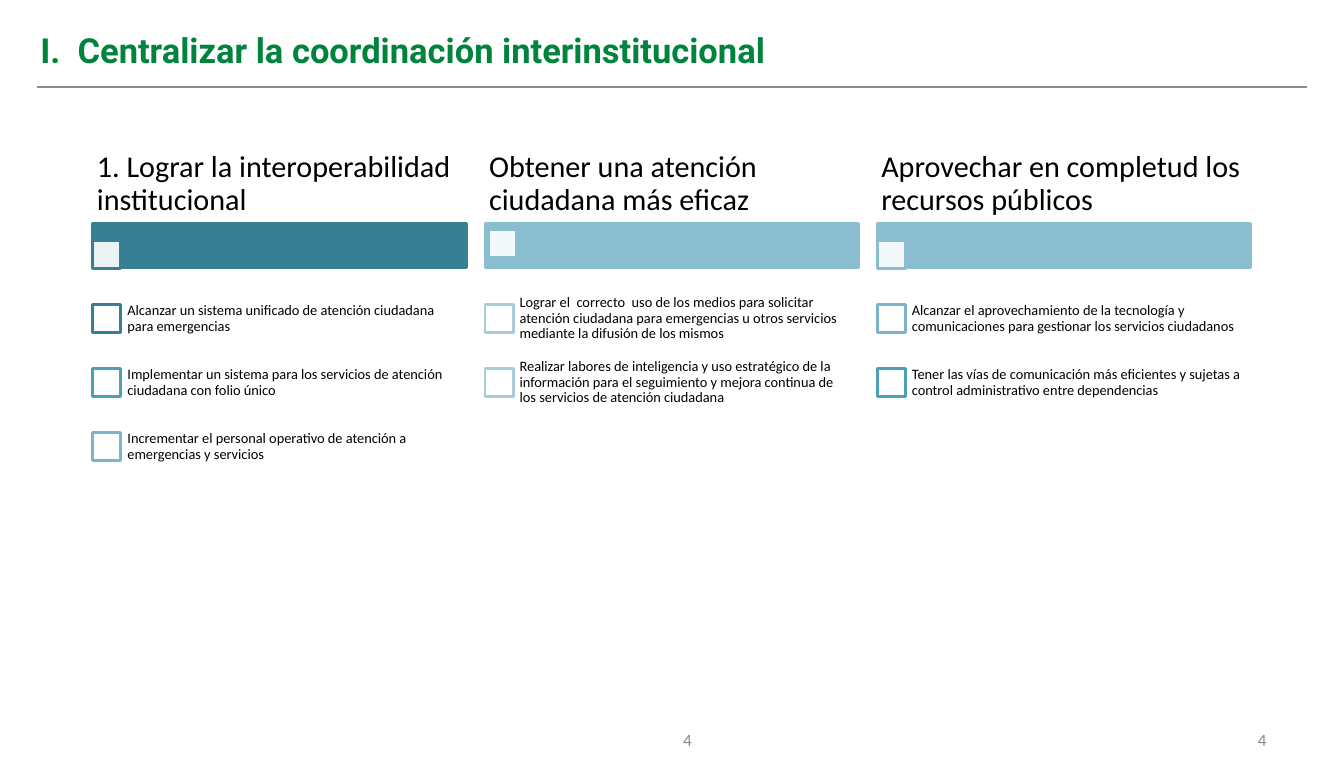
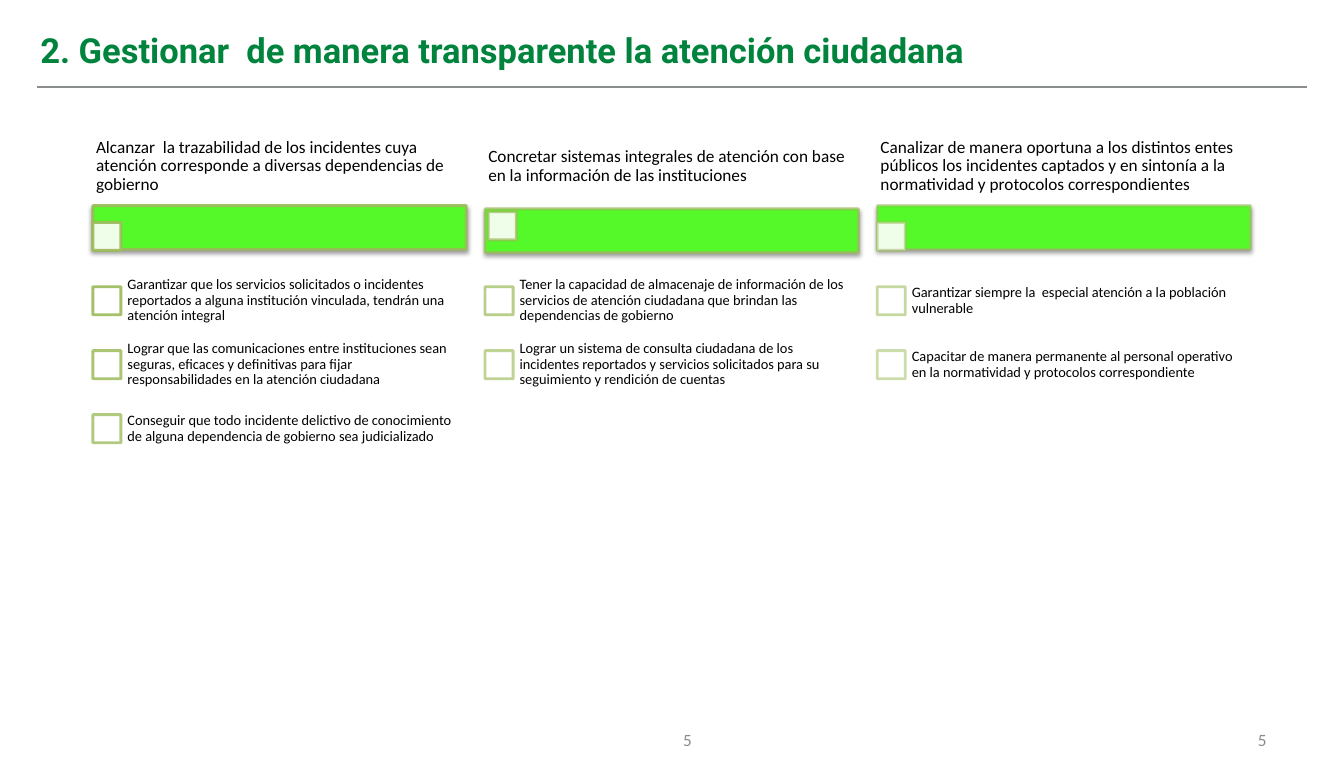
"""Builds two slides of objectives, each with three columns of checklist items."""
import dataclasses

import lxml.etree
import pptx
import pptx.dml.color
import pptx.enum.shapes
import pptx.enum.text
import pptx.oxml.ns
import pptx.util

Cm = pptx.util.Cm
Pt = pptx.util.Pt
qn = pptx.oxml.ns.qn
Align = pptx.enum.text.PP_ALIGN
Anchor = pptx.enum.text.MSO_ANCHOR


@dataclasses.dataclass(frozen=True)
class Theme:
    heading_font: str = "Roboto"
    body_font: str = "Calibri"
    heading: str = "00843D"
    gray: str = "898D8D"
    ink: str = "000000"
    paper: str = "FFFFFF"
    teal: str = "377F92"
    lagoon: str = "4EA0B9"
    mist: str = "7BB5C9"
    sky: str = "8ABDCF"
    ice: str = "A8CCDA"
    lime: str = "55F828"
    olive: str = "9BBB59"
    heading_size: float = 24
    objective_size: float = 21
    long_objective_size: float = 12
    number_size: float = 12
    item_size: float = 10
    outline: float = 2
    rule: float = 1.5


@dataclasses.dataclass(frozen=True)
class Column:
    objective: str
    fill: str
    edge: tuple
    items: tuple


@dataclasses.dataclass(frozen=True)
class Look:
    top: float
    size: float
    inset: tuple
    shadow: bool = False
    middle_drop: float = 0


THEME = Theme()
WIDE, HIGH = 33, 19.05
LEFT, STEP, COLUMN_WIDTH = 2.28, 9.63, 9.17
OBJECTIVE_HEIGHT, BAND_HEIGHT = 1.93, 1.07
ITEMS_OFFSET, ITEM_HEIGHT, ITEM_INDENT = 3.48, 1.57, 0.65
BOX = 0.69
SIDE_MARKER, MIDDLE_MARKER = (0, 2.34), (0.08, 2.08)


class Deck:
    def __init__(self, theme):
        self.theme = theme
        self.show = pptx.Presentation()
        self.show.slide_width, self.show.slide_height = Cm(WIDE), Cm(HIGH)
        self.slide = None

    def start(self, title, number):
        self.slide = self.show.slides.add_slide(self.show.slide_layouts[5])
        self.rule()
        self.title(title)
        for left, width, align in ((12.93, 7.9, Align.CENTER),
                                   (23.65, 7.7, Align.RIGHT)):
            self.text(number, (left, 17.65, width, 1.02),
                      self.theme.number_size, (0.25, 0.13), self.theme.gray,
                      align, 1)

    def rgb(self, color):
        return pptx.dml.color.RGBColor.from_string(color)

    def rule(self):
        rule = self.slide.shapes.add_connector(
            pptx.enum.shapes.MSO_CONNECTOR.STRAIGHT,
            Cm(0.91), Cm(2.13), Cm(32.1), Cm(2.13))
        rule.line.color.rgb = self.rgb(self.theme.gray)
        rule.line.width = Pt(self.theme.rule)
        lxml.etree.SubElement(rule.element.spPr, qn("a:effectLst"))

    def title(self, wording):
        heading = self.slide.shapes.title
        heading.left, heading.top = Cm(0.66), Cm(0.53)
        heading.width, heading.height = Cm(32.2), Cm(1.37)
        self.fill_text(heading.text_frame, wording, self.theme.heading_size,
                       (0.33, 0.18), self.theme.heading, Align.LEFT, 1)
        heading.text_frame.vertical_anchor = Anchor.TOP
        font = heading.text_frame.paragraphs[0].runs[0].font
        font.name, font.bold = self.theme.heading_font, True

    def fill_text(self, frame, wording, size, inset, color, align, spacing):
        frame.text = wording
        frame.word_wrap = True
        frame.auto_size = pptx.enum.text.MSO_AUTO_SIZE.NONE
        frame.vertical_anchor = Anchor.MIDDLE
        frame.margin_left = frame.margin_right = Cm(inset[0])
        frame.margin_top = frame.margin_bottom = Cm(inset[1])
        paragraph = frame.paragraphs[0]
        paragraph.alignment, paragraph.line_spacing = align, spacing
        font = paragraph.runs[0].font
        font.name, font.size = self.theme.body_font, Pt(size)
        font.color.rgb = self.rgb(color)

    def text(self, wording, area, size, inset, color=None, align=Align.LEFT,
             spacing=0.9):
        holder = self.slide.shapes.add_textbox(*map(Cm, area))
        self.fill_text(holder.text_frame, wording, size, inset,
                       color or self.theme.ink, align, spacing)

    def fade(self, parent, percent):
        if percent < 100:
            tint = parent.find(qn("a:solidFill")).find(qn("a:srgbClr"))
            alpha = lxml.etree.SubElement(tint, qn("a:alpha"))
            alpha.set("val", str(percent * 1000))

    def rectangle(self, area, fill, edge, fill_opacity=100, shadow=False):
        edge_color, edge_opacity = edge
        block = self.slide.shapes.add_shape(
            pptx.enum.shapes.MSO_SHAPE.RECTANGLE, *map(Cm, area))
        block.fill.solid()
        block.fill.fore_color.rgb = self.rgb(fill)
        block.line.color.rgb = self.rgb(edge_color)
        block.line.width = Pt(self.theme.outline)
        block.shadow.inherit = False
        properties = block.element.spPr
        self.fade(properties, fill_opacity)
        self.fade(properties.find(qn("a:ln")), edge_opacity)
        if shadow:
            self.drop_shadow(properties.find(qn("a:effectLst")))

    def drop_shadow(self, effects):
        outer = lxml.etree.SubElement(
            effects, qn("a:outerShdw"), blurRad=str(int(Pt(3.1))),
            dist=str(int(Pt(1.6))), dir="5400000", rotWithShape="0")
        tint = lxml.etree.SubElement(outer, qn("a:srgbClr"), val=self.theme.ink)
        lxml.etree.SubElement(tint, qn("a:alpha"), val="38000")

    def item(self, wording, left, top, edge):
        self.rectangle((left, top + (ITEM_HEIGHT - BOX) / 2, BOX, BOX),
                       self.theme.paper, edge)
        self.text(wording, (left + ITEM_INDENT, top,
                            COLUMN_WIDTH - ITEM_INDENT, ITEM_HEIGHT),
                  self.theme.item_size, (0.2, 0.2))

    def column(self, column, position, look):
        left = LEFT + position * STEP
        middle = position == 1
        drop = look.middle_drop if middle else 0
        across, down = MIDDLE_MARKER if middle else SIDE_MARKER
        self.rectangle((left, look.top + OBJECTIVE_HEIGHT + drop,
                        COLUMN_WIDTH, BAND_HEIGHT),
                       column.fill, column.edge, shadow=look.shadow)
        self.rectangle((left + across, look.top + down, BOX, BOX),
                       self.theme.paper, column.edge, 90)
        self.text(column.objective,
                  (left, look.top, COLUMN_WIDTH, OBJECTIVE_HEIGHT),
                  look.size, look.inset)
        for row, (wording, edge) in enumerate(column.items):
            self.item(wording, left,
                      look.top + ITEMS_OFFSET + row * ITEM_HEIGHT, edge)


def solid(color):
    return color, 100


def olive(opacity):
    return THEME.olive, opacity


COORDINATION = (
    Column("1. Lograr la interoperabilidad institucional",
           THEME.teal, solid(THEME.teal), (
               ("Alcanzar un sistema unificado de atención ciudadana para "
                "emergencias", solid(THEME.teal)),
               ("Implementar un sistema para los servicios de atención "
                "ciudadana con folio único", solid(THEME.lagoon)),
               ("Incrementar el personal operativo de atención a emergencias "
                "y servicios", solid(THEME.mist)))),
    Column("Obtener una atención ciudadana más eficaz",
           THEME.sky, solid(THEME.sky), (
               ("Lograr el  correcto  uso de los medios para solicitar "
                "atención ciudadana para emergencias u otros servicios "
                "mediante la difusión de los mismos", solid(THEME.ice)),
               ("Realizar labores de inteligencia y uso estratégico de la "
                "información para el seguimiento y mejora continua de los "
                "servicios de atención ciudadana", solid(THEME.ice)))),
    Column("Aprovechar en completud los recursos públicos",
           THEME.sky, solid(THEME.sky), (
               ("Alcanzar el aprovechamiento de la tecnología y "
                "comunicaciones para gestionar los servicios ciudadanos",
                solid(THEME.mist)),
               ("Tener las vías de comunicación más eficientes y sujetas a "
                "control administrativo entre dependencias",
                solid(THEME.lagoon)))),
)

TRANSPARENCY = (
    Column("Alcanzar  la trazabilidad de los incidentes cuya atención "
           "corresponde a diversas dependencias de gobierno",
           THEME.lime, olive(90), (
               ("Garantizar que los servicios solicitados o incidentes "
                "reportados a alguna institución vinculada, tendrán una "
                "atención integral", olive(90)),
               ("Lograr que las comunicaciones entre instituciones sean "
                "seguras, eficaces y definitivas para fijar "
                "responsabilidades en la atención ciudadana", olive(83)),
               ("Conseguir que todo incidente delictivo de conocimiento de "
                "alguna dependencia de gobierno sea judicializado",
                olive(77)))),
    Column("Concretar sistemas integrales de atención con base en la "
           "información de las instituciones",
           THEME.lime, olive(70), (
               ("Tener la capacidad de almacenaje de información de los "
                "servicios de atención ciudadana que brindan las "
                "dependencias de gobierno", olive(70)),
               ("Lograr un sistema de consulta ciudadana de los incidentes "
                "reportados y servicios solicitados para su seguimiento y "
                "rendición de cuentas", olive(63)))),
    Column("Canalizar de manera oportuna a los distintos entes públicos los "
           "incidentes captados y en sintonía a la normatividad y protocolos "
           "correspondientes",
           THEME.lime, olive(50), (
               ("Garantizar siempre la  especial atención a la población "
                "vulnerable", olive(57)),
               ("Capacitar de manera permanente al personal operativo en la "
                "normatividad y protocolos correspondiente", olive(50)))),
)

SLIDES = (
    ("I.  Centralizar la coordinación interinstitucional", "4", COORDINATION,
     Look(top=3.56, size=THEME.objective_size, inset=(0.1, 0.08))),
    ("2. Gestionar  de manera transparente la atención ciudadana", "5",
     TRANSPARENCY,
     Look(top=3.12, size=THEME.long_objective_size, inset=(0.08, 0.05),
          shadow=True, middle_drop=0.08)),
)


def main():
    deck = Deck(THEME)
    for title, number, columns, look in SLIDES:
        deck.start(title, number)
        for position, column in enumerate(columns):
            deck.column(column, position, look)
    deck.show.save("out.pptx")


if __name__ == "__main__":
    main()
